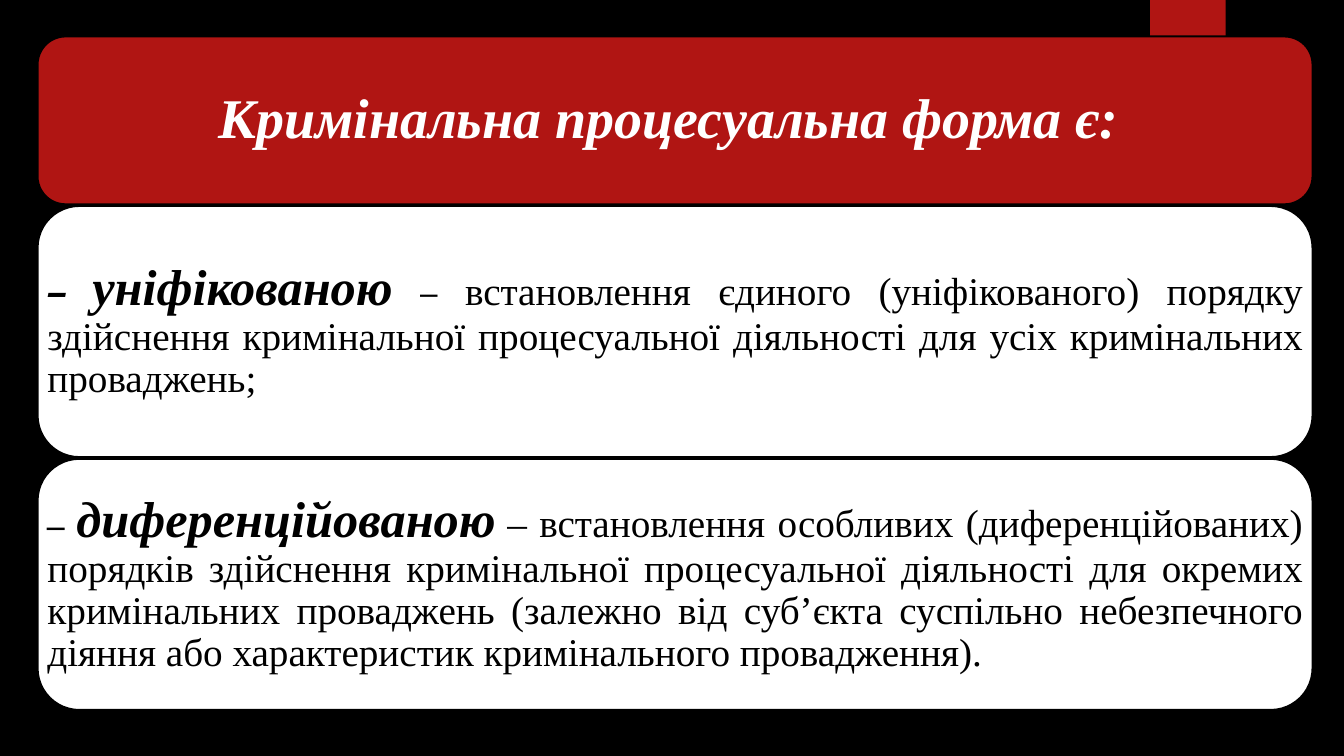
"""Builds a slide on the two kinds of criminal procedural form."""
from pptx import Presentation
from pptx.dml.color import RGBColor
from pptx.enum.shapes import MSO_SHAPE as SHAPE
from pptx.enum.text import MSO_ANCHOR as ANCHOR, MSO_AUTO_SIZE as AUTO, PP_ALIGN as ALIGN
from pptx.util import Pt

BLACK = RGBColor(0x00, 0x00, 0x00)
WHITE = RGBColor(0xFF, 0xFF, 0xFF)
RED = RGBColor(0xB0, 0x15, 0x13)
SERIF, SANS = "Times New Roman", "TeX Gyre Adventor"

TITLE = [("Кримінальна процесуальна форма є: ", SERIF, 40, True)]
UNIFIED = [
    ("– ", SANS, 25, True),
    ("уніфікованою", SERIF, 36, True),
    (" ", SANS, 25, True),
    ("– ", SANS, 25, False),
    ("встановлення єдиного (уніфікованого) порядку здійснення кримінальної "
     "процесуальної діяльності для усіх кримінальних проваджень; ", SERIF, 28, False),
]
DIFFERENTIATED = [
    ("– ", SERIF, 25, True),
    ("диференційованою", SERIF, 36, True),
    (" ", SERIF, 25, True),
    ("– встановлення особливих (диференційованих) порядків здійснення кримінальної "
     "процесуальної діяльності для окремих кримінальних проваджень (залежно від "
     "суб’єкта суспільно небезпечного діяння або характеристик кримінального "
     "провадження).", SERIF, 28, False),
]
CARDS = [
    (TITLE, 120, RED, WHITE, ALIGN.CENTER, 12),
    (UNIFIED, 179.5, WHITE, BLACK, ALIGN.JUSTIFY, 7.2),
    (DIFFERENTIATED, 179.5, WHITE, BLACK, ALIGN.JUSTIFY, 7.2),
]
LEFT, TOP, WIDTH, GAP = 26.8, 26, 910.8, 1.1
TAB = (821.5, 0, 54, 90)


def add_block(s, kind, box, fill, line=None):
    sp = s.shapes.add_shape(kind, *map(Pt, box))
    sp.shadow.inherit = False
    sp.fill.solid()
    sp.fill.fore_color.rgb = fill
    if line is None:
        sp.line.fill.background()
    else:
        sp.line.color.rgb = line
        sp.line.width = Pt(1.5)


def write_text(sp, box, runs, color, align, inset):
    sp.left, sp.top, sp.width, sp.height = map(Pt, box)
    tf = sp.text_frame
    frame = {"word_wrap": True, "auto_size": AUTO.NONE, "vertical_anchor": ANCHOR.MIDDLE}
    frame.update({f"margin_{side}": Pt(inset) for side in ("left", "top", "right", "bottom")})
    for name, value in frame.items():
        setattr(tf, name, value)
    p = tf.paragraphs[0]
    p.alignment, p.line_spacing = align, 0.9
    for text, face, size, strong in runs:
        r = p.add_run()
        r.text = text
        r.font.color.rgb = color
        for name, value in {"name": face, "size": Pt(size), "bold": strong, "italic": strong}.items():
            setattr(r.font, name, value)


def main():
    prs = Presentation()
    prs.slide_width, prs.slide_height = Pt(960), Pt(540)
    s = prs.slides.add_slide(prs.slide_layouts[5])
    s.background.fill.solid()
    s.background.fill.fore_color.rgb = BLACK
    add_block(s, SHAPE.RECTANGLE, TAB, RED)
    top = TOP
    for runs, height, fill, color, align, inset in CARDS:
        box = (LEFT, top, WIDTH, height)
        add_block(s, SHAPE.ROUNDED_RECTANGLE, box, fill, BLACK)
        if runs is TITLE:
            sp = s.shapes.title
            sp.element.getparent().append(sp.element)
        else:
            sp = s.shapes.add_textbox(*map(Pt, box))
        write_text(sp, box, runs, color, align, inset)
        top += height + GAP
    prs.save("out.pptx")


if __name__ == "__main__":
    main()
